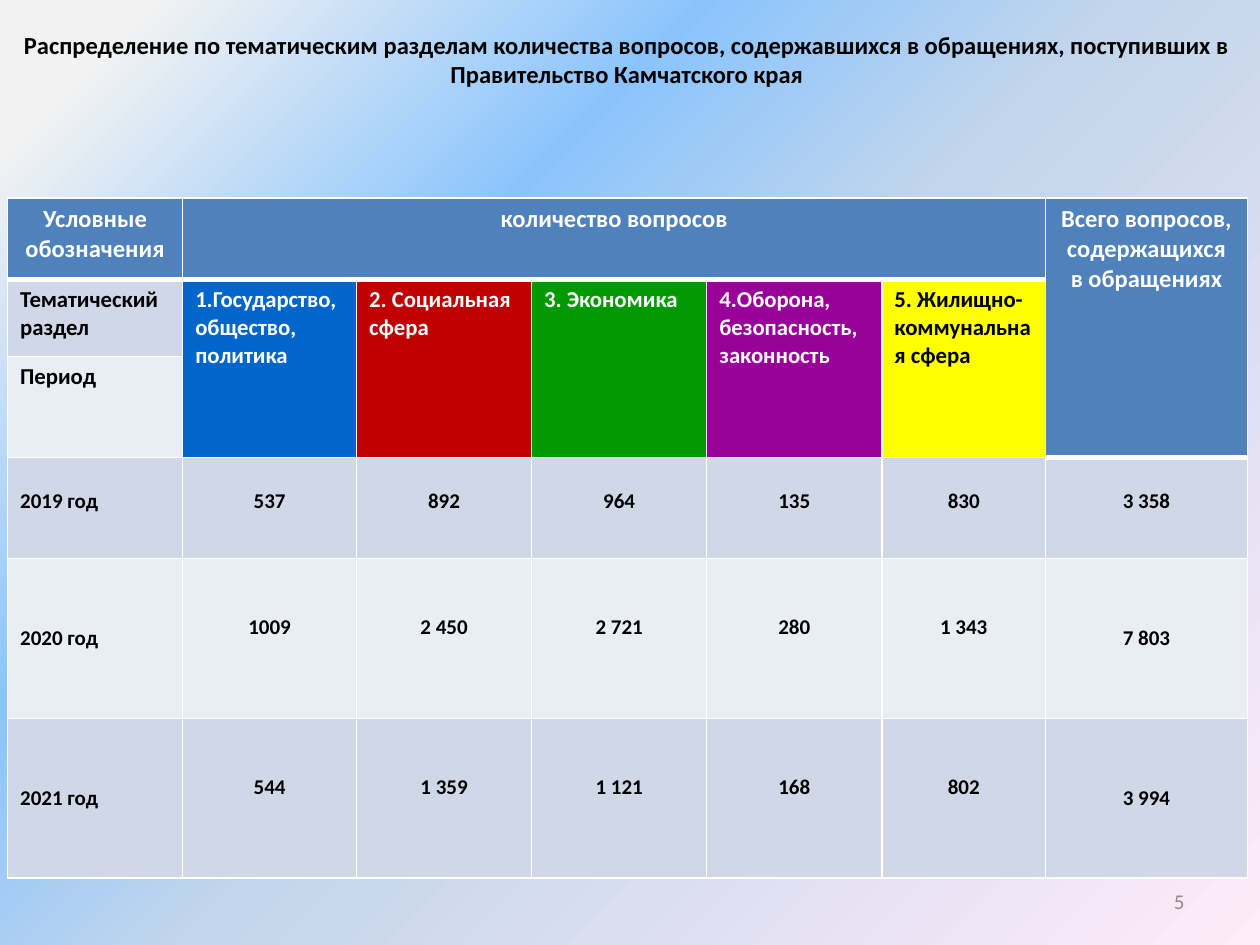
"""Build the slide on appeal questions by thematic section."""
from copy import deepcopy

from lxml import etree
from pptx import Presentation
from pptx.dml.color import RGBColor
from pptx.enum import text
from pptx.oxml import ns
from pptx.util import Inches, Pt

COLORS = {
    "white": "FFFFFF", "black": "000000", "gray": "8C8C8C",
    "header": "4F81BD", "dark_band": "D0D8E8", "light_band": "E9EDF4",
    "state": "0066CC", "social": "C00000", "economy": "009900",
    "defence": "990099", "housing": "FFFF00",
}
BACKGROUND = [(0.07, "F2F2F2"), (0.32, "8BC4FD"), (0.52, "C4D6EB"), (1, "FFEBFA")]
CENTER = text.PP_ALIGN.CENTER
MIDDLE = text.MSO_ANCHOR.MIDDLE


def write(frame, words, size=12, color="black", bold=True, align=text.PP_ALIGN.LEFT):
    frame.word_wrap = True
    paragraph = frame.paragraphs[0]
    paragraph.alignment = align
    run = paragraph.add_run()
    run.text = words
    run.font.name = "Calibri"
    run.font.size = Pt(size)
    run.font.bold = bold
    run.font.color.rgb = RGBColor.from_string(COLORS[color])


def add_border(cell, side, width):
    line = etree.SubElement(cell._tc.get_or_add_tcPr(), ns.qn(f"a:ln{side}"), w=str(Pt(width)))
    fill = etree.SubElement(line, ns.qn("a:solidFill"))
    etree.SubElement(fill, ns.qn("a:srgbClr"), val=COLORS["white"])


deck = Presentation()
deck.slide_width, deck.slide_height = Inches(10), Inches(7.5)
slide = deck.slides.add_slide(deck.slide_layouts[6])

backdrop = slide.background.fill
backdrop.gradient()
backdrop.gradient_angle = 315
stop_list = next(slide.element.iter(ns.qn("a:gsLst")))
while len(stop_list) < len(BACKGROUND):
    stop_list.append(deepcopy(stop_list[0]))
for stop, (position, color) in zip(backdrop.gradient_stops, BACKGROUND):
    stop.position = position
    stop.color.rgb = RGBColor.from_string(color)

title = slide.shapes.add_textbox(Inches(-0.07), Inches(-0.3), Inches(10.09), Inches(1.58)).text_frame
title.vertical_anchor = MIDDLE
title.margin_bottom = Inches(0.09)
write(title, "Распределение по тематическим разделам количества вопросов, содержавшихся "
      "в обращениях, поступивших в Правительство Камчатского края", size=14, align=CENTER)

widths = [1.39, 1.38, 1.39, 1.39, 1.39, 1.3, 1.6]
heights = [0.65, 0.61, 0.46, 0.8, 1.27, 1.27]
questions = slide.shapes.add_table(len(heights), len(widths), Inches(0.06), Inches(1.57),
                                   Inches(9.83), Inches(5.05)).table
for column, width in zip(questions.columns, widths):
    column.width = Inches(width)
for row, height in zip(questions.rows, heights):
    row.height = Inches(height)

row_fills = ["header", "dark_band", "light_band", "dark_band", "light_band", "dark_band"]
section_fills = ["state", "social", "economy", "defence", "housing"]
thick_edges = {(0, c) for c in range(7)} | {(2, 6)}
for r, row_fill in enumerate(row_fills):
    for c in range(len(widths)):
        cell = questions.cell(r, c)
        for side, edge in (("L", None), ("R", None), ("T", (r - 1, c)), ("B", (r, c))):
            add_border(cell, side, 3 if edge in thick_edges else 1)
        fill = row_fill
        if r < 3 and c == 6:
            fill = "header"
        elif r in (1, 2) and c > 0:
            fill = section_fills[c - 1]
        cell.fill.solid()
        cell.fill.fore_color.rgb = RGBColor.from_string(COLORS[fill])

questions.cell(0, 1).merge(questions.cell(0, 5))
questions.cell(0, 6).merge(questions.cell(2, 6))
headings = [(0, "Условные обозначения"), (1, "количество вопросов"),
            (6, "Всего вопросов, содержащихся в обращениях")]
for c, heading in headings:
    write(questions.cell(0, c).text_frame, heading, size=14, color="white", align=CENTER)

for r, label in enumerate(["Тематический раздел", "Период"], 1):
    write(questions.cell(r, 0).text_frame, label, size=13)
sections = ["1.Государство, общество, политика", "2. Социальная сфера", "3. Экономика",
            "4.Оборона, безопасность, законность", "5. Жилищно-коммунальная сфера"]
for c, section in enumerate(sections, 1):
    questions.cell(1, c).merge(questions.cell(2, c))
    write(questions.cell(1, c).text_frame, section, size=13, color="black" if c == 5 else "white")

years = [
    ["2019 год", "537", "892", "964", "135", "830", "3 358"],
    ["2020 год", "1009", "2 450", "2 721", "280", "1 343", "7 803"],
    ["2021 год", "544", "1 359", "1 121", "168", "802", "3 994"],
]
for r, year in enumerate(years, 3):
    for c, value in enumerate(year):
        cell = questions.cell(r, c)
        if r > 3 and c in (0, 6):
            cell.vertical_anchor = MIDDLE
        else:
            cell.margin_top = Inches(0.25 if r == 3 else 0.45)
        write(cell.text_frame, value, align=CENTER if c else text.PP_ALIGN.LEFT)

page = slide.shapes.add_textbox(Inches(7.17), Inches(6.95), Inches(2.33), Inches(0.4)).text_frame
page.vertical_anchor = MIDDLE
write(page, "5", color="gray", bold=False, align=text.PP_ALIGN.RIGHT)

deck.save("out.pptx")
